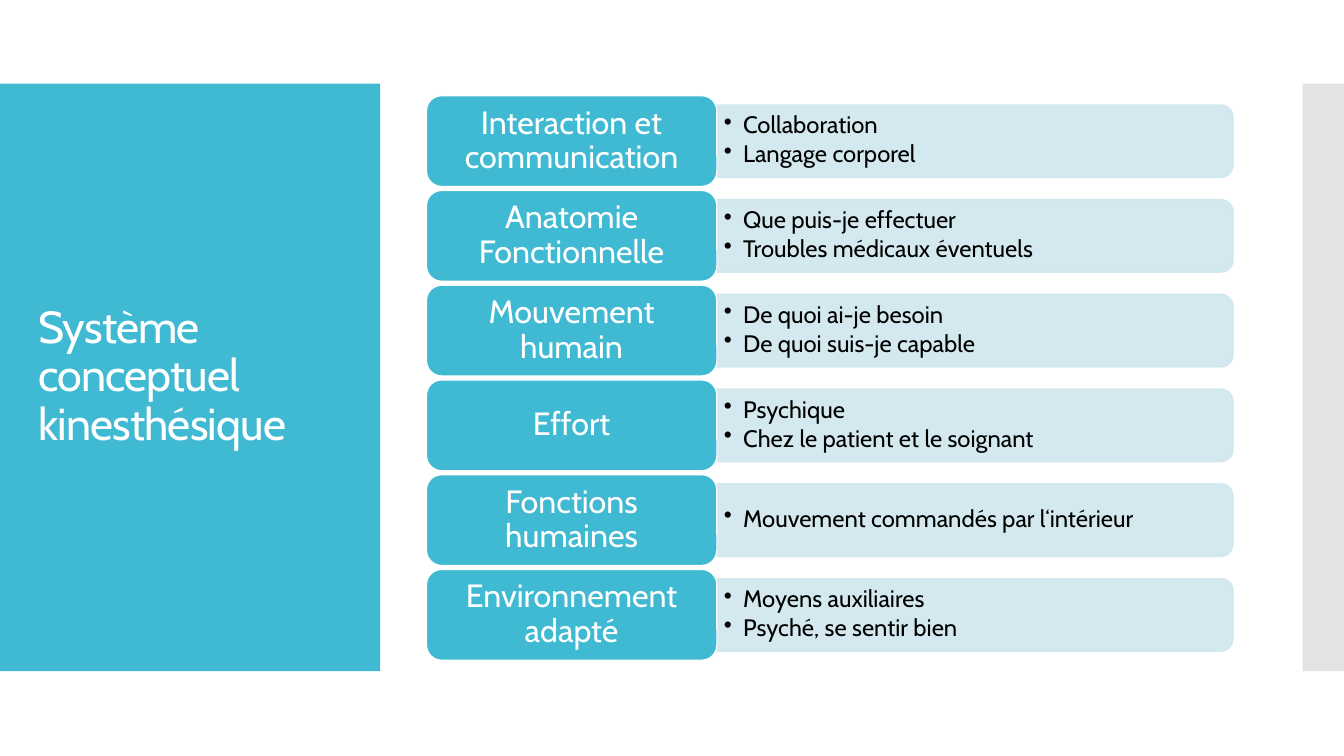
from pptx import Presentation
from pptx import util as u
from pptx.dml.color import RGBColor
from pptx.enum import shapes, text
from pptx.oxml.ns import qn
from lxml import etree

TEAL = RGBColor(0x40, 0xBA, 0xD2)
PALE = RGBColor(0xCF, 0xE7, 0xEE)
GREY = RGBColor(0xC8, 0xC8, 0xC8)
WHITE = RGBColor(0xFF, 0xFF, 0xFF)
BLACK = RGBColor(0, 0, 0)
FONT = "Cabin"

TITLE = "Système conceptuel kinesthésique"
CONCEPTS = [
    ("Interaction et communication", ["Collaboration", "Langage corporel"]),
    ("Anatomie Fonctionnelle", ["Que puis-je effectuer", "Troubles médicaux éventuels"]),
    ("Mouvement humain", ["De quoi ai-je besoin", "De quoi suis-je capable"]),
    ("Effort", ["Psychique", "Chez le patient et le soignant"]),
    ("Fonctions humaines", ["Mouvement commandés par l‘intérieur"]),
    ("Environnement adapté", ["Moyens auxiliaires", "Psyché, se sentir bien"]),
]


def apply(target, values):
    for name, value in values.items():
        setattr(target, name, value)


def set_alpha(solid_fill, percent):
    alpha = etree.SubElement(solid_fill[0], qn("a:alpha"))
    alpha.set("val", str(percent * 1000))


def add_panel(slide, preset, box, color, outline=None, opacity=100):
    panel = slide.shapes.add_shape(preset, *map(u.Inches, box))
    panel.shadow.inherit = False
    panel.fill.solid()
    panel.fill.fore_color.rgb = color
    if outline is None:
        panel.line.fill.background()
    else:
        panel.line.color.rgb = outline
        panel.line.width = u.Pt(0.85)
    if opacity < 100:
        for solid_fill in panel._element.spPr.iter(qn("a:solidFill")):
            set_alpha(solid_fill, opacity)
    return panel


def write(shape, lines, size, color, align, inset_x, inset_y, space_after=0):
    frame = shape.text_frame
    apply(frame, {
        "word_wrap": True,
        "vertical_anchor": text.MSO_ANCHOR.MIDDLE,
        "margin_left": u.Inches(inset_x),
        "margin_right": u.Inches(inset_x),
        "margin_top": u.Inches(inset_y),
        "margin_bottom": u.Inches(inset_y),
    })
    for index, line in enumerate(lines):
        paragraph = frame.add_paragraph() if index else frame.paragraphs[0]
        apply(paragraph, {"alignment": align, "line_spacing": 0.9,
                          "space_after": u.Pt(space_after)})
        run = paragraph.add_run()
        run.text = line
        apply(run.font, {"name": FONT, "size": u.Pt(size)})
        run.font.color.rgb = color
    return frame.paragraphs


def add_bullet(paragraph):
    properties = paragraph._p.get_or_add_pPr()
    properties.set("marL", str(u.Inches(0.19)))
    properties.set("indent", str(-u.Inches(0.19)))
    etree.SubElement(properties, qn("a:buChar")).set("char", "•")


def title_region(slide, left, top, width, height):
    add_panel(slide, shapes.MSO_SHAPE.RECTANGLE, (left, top, width, height), TEAL)
    heading = slide.shapes.add_textbox(
        *map(u.Inches, (left + 0.28, top + 0.4, width - 0.55, height - 0.8)))
    paragraphs = write(heading, [TITLE], 32, WHITE, text.PP_ALIGN.LEFT, 0.1, 0.05)
    paragraphs[0].runs[0].font._element.set("spc", "-60")


def edge_region(slide, left, top, width, height):
    add_panel(slide, shapes.MSO_SHAPE.RECTANGLE, (left, top, width, height), GREY, opacity=50)


def concept_row(slide, left, top, width, height, concept, details):
    name_width = width * 0.36
    band_width, band_height = width - name_width, height * 0.8
    band_left, middle = left + name_width, top + height / 2
    band = add_panel(
        slide, shapes.MSO_SHAPE.ROUND_2_SAME_RECTANGLE,
        (band_left + (band_width - band_height) / 2, middle - band_width / 2,
         band_height, band_width),
        PALE, PALE, 90)
    band.rotation = 90

    points = slide.shapes.add_textbox(
        *map(u.Inches, (band_left, middle - 0.33, band_width - 0.03, 0.65)))
    for paragraph in write(points, details, 17, BLACK, text.PP_ALIGN.LEFT, 0.07, 0.04, 2.5):
        add_bullet(paragraph)

    name = add_panel(slide, shapes.MSO_SHAPE.ROUNDED_RECTANGLE,
                     (left, top, name_width, height), TEAL, WHITE)
    write(name, [concept], 23, WHITE, text.PP_ALIGN.CENTER, 0.1, 0.05)


def concepts_region(slide, left, top, width, height):
    row_height = 0.9
    pitch = (height - row_height) / (len(CONCEPTS) - 1)
    for index, (concept, details) in enumerate(CONCEPTS):
        concept_row(slide, left, top + index * pitch, width, row_height, concept, details)


def main():
    deck = Presentation()
    apply(deck, {"slide_width": u.Inches(13.33), "slide_height": u.Inches(7.5)})
    slide = deck.slides.add_slide(deck.slide_layouts[6])
    title_region(slide, 0, 0.83, 3.77, 5.83)
    edge_region(slide, 12.92, 0.83, 0.41, 5.83)
    concepts_region(slide, 4.23, 0.95, 8, 5.6)
    deck.save("out.pptx")


if __name__ == "__main__":
    main()
